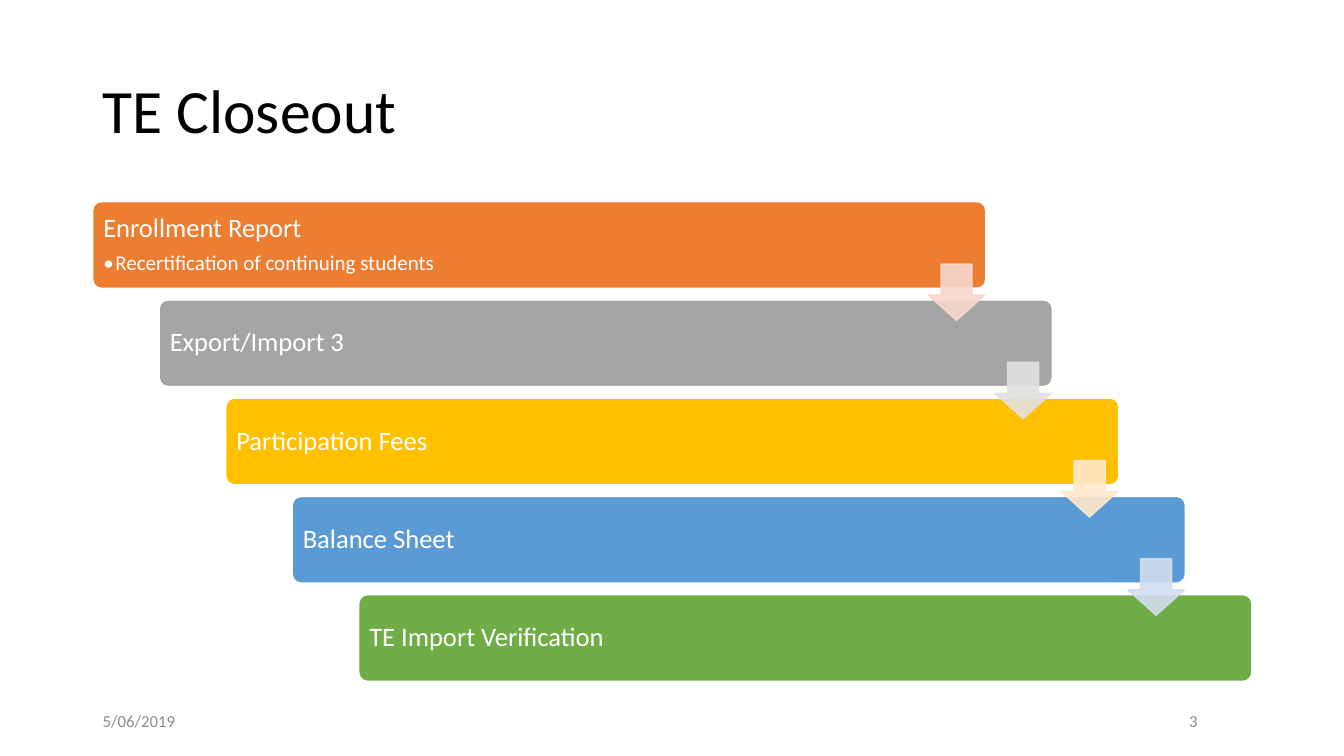
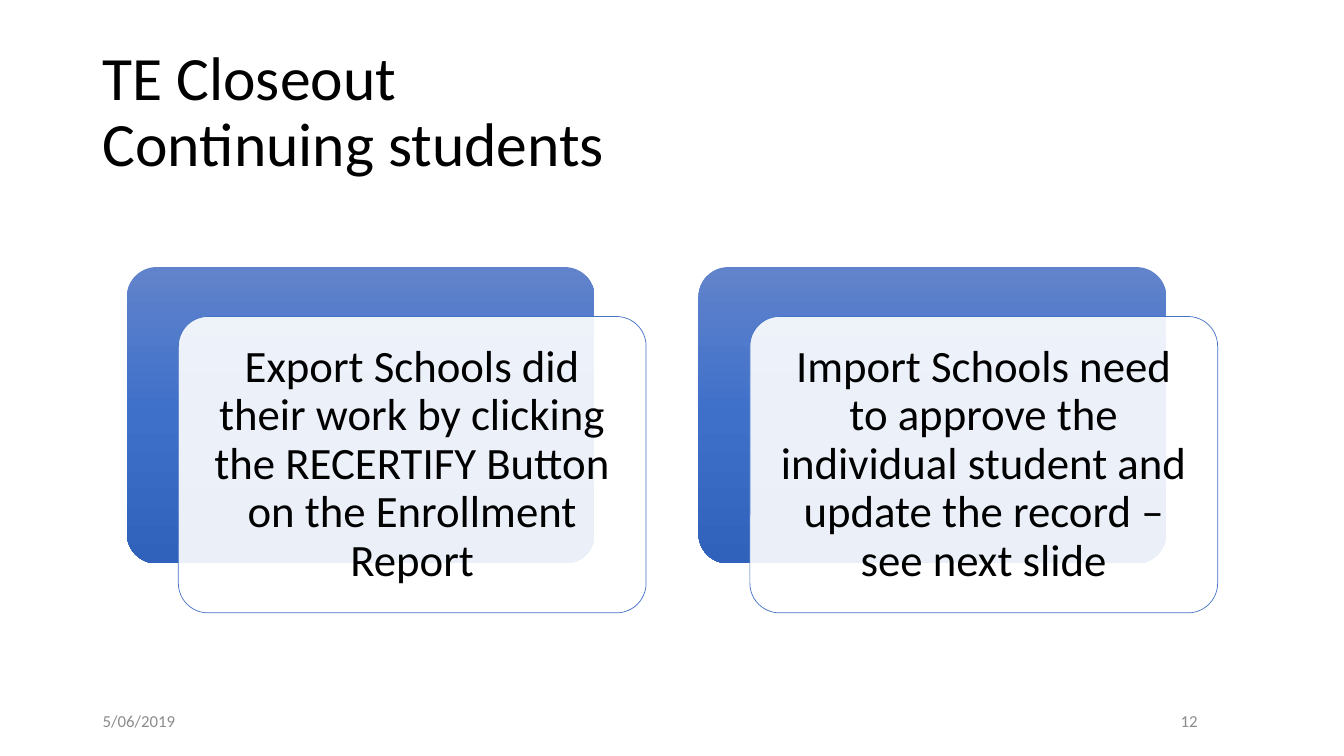
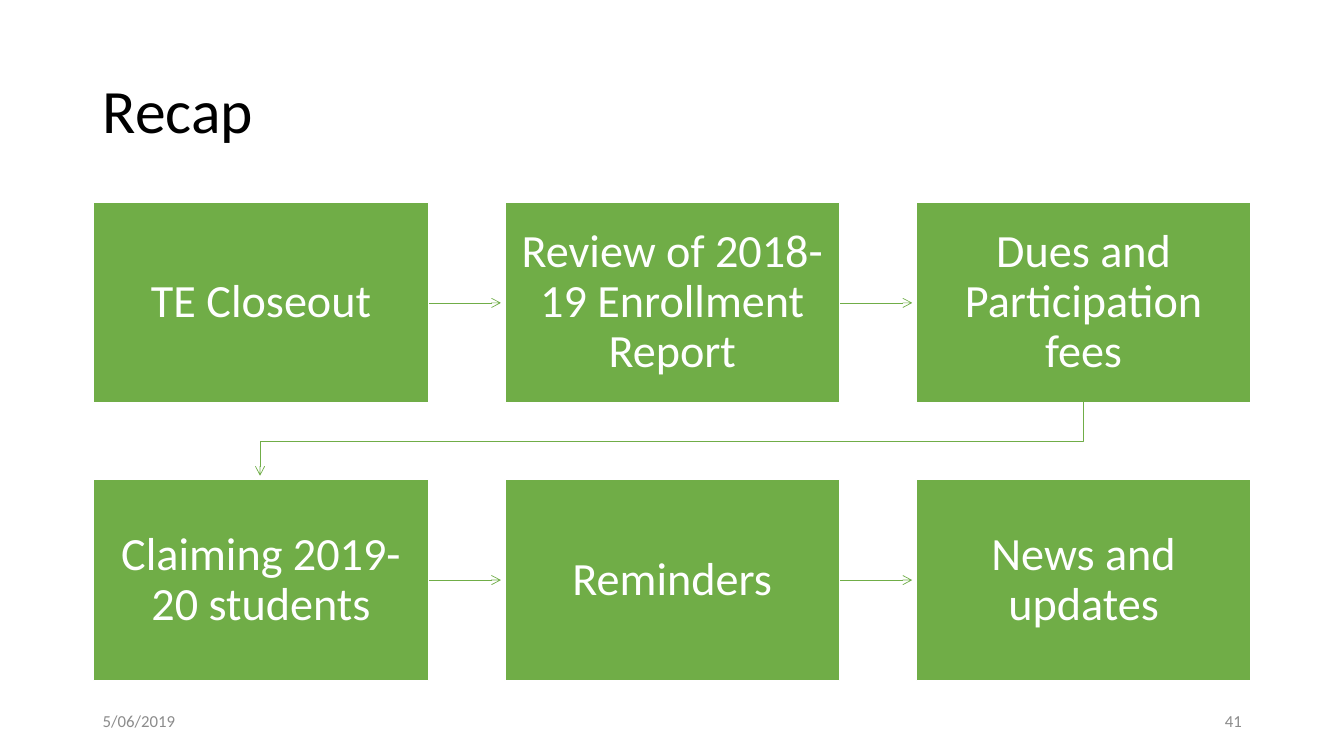
from typing import NamedTuple, Optional

from lxml.etree import SubElement
from pptx import Presentation
from pptx.dml.color import RGBColor
from pptx.enum.shapes import MSO_CONNECTOR, MSO_SHAPE as Kind
from pptx.enum.text import MSO_ANCHOR as Anchor, PP_ALIGN as Align
from pptx.oxml.ns import qn
from pptx.util import Inches, Pt

FONT = "Calibri"
BLACK = RGBColor(0x00, 0x00, 0x00)
WHITE = RGBColor(0xFF, 0xFF, 0xFF)
GRAY = RGBColor(0x8C, 0x8C, 0x8C)
ORANGE = RGBColor(0xED, 0x7D, 0x31)
SILVER = RGBColor(0xA5, 0xA5, 0xA5)
GOLD = RGBColor(0xFF, 0xC0, 0x00)
SKY = RGBColor(0x5B, 0x9B, 0xD5)
GREEN = RGBColor(0x70, 0xAD, 0x47)
BLUE = RGBColor(0x44, 0x72, 0xC4)
PEACH = RGBColor(0xF8, 0xD7, 0xCE)
PALE = RGBColor(0xE1, 0xE1, 0xE1)
CREAM = RGBColor(0xFF, 0xE8, 0xCC)
MIST = RGBColor(0xD2, 0xDE, 0xEF)
SHADES = (
    (0, RGBColor(0x61, 0x83, 0xCB)),
    (50, RGBColor(0x3E, 0x70, 0xCA)),
    (100, RGBColor(0x30, 0x62, 0xBB)),
)
DATE = "5/06/2019"


class Box(NamedTuple):
    left: float
    top: float
    width: float
    height: float

    def emu(self) -> tuple:
        return tuple(Inches(side) for side in self)


class Style(NamedTuple):
    size: float
    color: RGBColor
    align: Align = Align.LEFT
    pad: tuple = (0.1, 0.05)
    space: Optional[float] = 0.9


class Step(NamedTuple):
    label: str
    fill: RGBColor
    arrow: Optional[RGBColor] = None
    note: str = ""


TITLE = Style(44, BLACK)
FOOT = Style(12, GRAY, space=None)
PAGE = FOOT._replace(align=Align.RIGHT)
BAR = Style(19, WHITE, pad=(0.08, 0.08))
CARD = Style(32, BLACK, Align.CENTER, (0.15, 0.13))
TILE = Style(33, WHITE, Align.CENTER, (0.16, 0.17))

STEPS = (
    Step("Enrollment Report", ORANGE, PEACH, "Recertification of continuing students"),
    Step("Export/Import 3", SILVER, PALE),
    Step("Participation Fees", GOLD, CREAM),
    Step("Balance Sheet", SKY, MIST),
    Step("TE Import Verification", GREEN),
)
CARDS = (
    "Export Schools did their work by clicking the RECERTIFY Button "
    "on the Enrollment Report",
    "Import Schools need to approve the individual student and update "
    "the record – see next slide",
)
TOPICS = (
    "TE Closeout",
    "Review of 2018-19 Enrollment Report",
    "Dues and Participation fees",
    "Claiming 2019-20 students",
    "Reminders",
    "News and updates",
)


def write(shape, text: str, style: Style) -> None:
    frame = shape.text_frame
    frame.word_wrap = True
    frame.vertical_anchor = Anchor.MIDDLE
    frame.margin_left = frame.margin_right = Inches(style.pad[0])
    frame.margin_top = frame.margin_bottom = Inches(style.pad[1])
    frame.text = text
    for para in frame.paragraphs:
        para.alignment = style.align
        para.line_spacing = style.space
        para.font.name = FONT
        para.font.size = Pt(style.size)
        para.font.color.rgb = style.color


def add_text(slide, box: Box, text: str, style: Style) -> None:
    write(slide.shapes.add_textbox(*box.emu()), text, style)


def add_shape(slide, kind, box: Box, fill=None, line=None, width=1.0, adjust=()):
    shape = slide.shapes.add_shape(kind, *box.emu())
    shape.shadow.inherit = False
    for i, value in enumerate(adjust):
        shape.adjustments[i] = value
    if fill is None:
        shape.fill.background()
    else:
        shape.fill.solid()
        shape.fill.fore_color.rgb = fill
    if line is None:
        shape.line.fill.background()
    else:
        shape.line.color.rgb = line
        shape.line.width = Pt(width)
    return shape


def fade(part) -> None:
    """Make every colour inside an XML part 90% opaque."""
    for color in part.iter(qn("a:srgbClr")):
        SubElement(color, qn("a:alpha"), val="90000")


def shade(shape) -> None:
    """Fill a shape with the blue gradient, light at the top."""
    shape.fill.gradient()
    shape.fill.gradient_angle = 270
    stops = shape._element.spPr.find(qn("a:gradFill")).find(qn("a:gsLst"))
    for stop in list(stops):
        stops.remove(stop)
    for place, color in SHADES:
        stop = SubElement(stops, qn("a:gs"), pos=str(place * 1000))
        SubElement(stop, qn("a:srgbClr"), val=str(color))


def add_note(shape, text: str) -> None:
    """Add a bulleted line below the label of a bar."""
    frame = shape.text_frame
    frame.paragraphs[0].space_after = Pt(7)
    para = frame.add_paragraph()
    para.text = text
    para.alignment = Align.LEFT
    para.line_spacing = 0.9
    para.font.name = FONT
    para.font.size = Pt(15)
    para.font.color.rgb = WHITE
    props = para._p.get_or_add_pPr()
    props.set("marL", str(Inches(0.12)))
    props.set("indent", str(Inches(-0.12)))
    face = SubElement(props, qn("a:buFont"), typeface=FONT)
    bullet = SubElement(props, qn("a:buChar"), char="•")
    for part in (face, bullet):
        props.find(qn("a:defRPr")).addprevious(part)


def style_arrow(shape) -> None:
    shape.line.color.rgb = GREEN
    shape.line.width = Pt(0.5)
    SubElement(shape.line._get_or_add_ln(), qn("a:tailEnd"), type="arrow")


def add_arrow(slide, left: float, right: float, y: float) -> None:
    arrow = slide.shapes.add_connector(
        MSO_CONNECTOR.STRAIGHT, Inches(left), Inches(y), Inches(right), Inches(y)
    )
    style_arrow(arrow)
    SubElement(arrow._element.spPr, qn("a:effectLst"))


def add_bend(slide, points: list) -> None:
    """Draw an arrow along several points."""
    spots = [(Inches(x), Inches(y)) for x, y in points]
    outline = slide.shapes.build_freeform(*spots[0])
    outline.add_line_segments(spots[1:], close=False)
    bend = outline.convert_to_shape()
    bend.shadow.inherit = False
    bend.fill.background()
    style_arrow(bend)


def add_slide(deck, title: str, page: str, kind=Kind.OVAL):
    """Start a slide with its title, date and page number."""
    slide = deck.slides.add_slide(deck.slide_layouts[6])
    add_text(slide, Box(0.92, 0.4, 11.5, 1.45), title, TITLE)
    add_text(slide, Box(0.92, 6.95, 3, 0.4), DATE, FOOT)
    write(add_shape(slide, kind, Box(9.42, 6.95, 3, 0.4)), page, PAGE)
    return slide


def draw_steps(deck) -> None:
    slide = add_slide(deck, "TE Closeout", "3")
    spots = [(0.92 + 0.66 * i, 2 + 3.9 * i / 4) for i in range(len(STEPS))]
    for step, (x, y) in zip(STEPS, spots):
        box = Box(x, y, 8.86, 0.86)
        bar = add_shape(slide, Kind.ROUNDED_RECTANGLE, box, step.fill, WHITE, adjust=(0.1,))
        write(bar, step.label, BAR)
        if step.note:
            add_note(bar, step.note)
    for step, (x, y) in zip(STEPS, spots):
        if step.arrow is not None:
            box = Box(x + 8.29, y + 0.62, 0.56, 0.56)
            arrow = add_shape(
                slide, Kind.DOWN_ARROW, box, step.arrow, step.arrow, adjust=(0.55, 0.45)
            )
            fade(arrow._element.spPr)


def draw_cards(deck) -> None:
    slide = add_slide(deck, "TE Closeout\vContinuing students", "12")
    for i, text in enumerate(CARDS):
        back = Box(1.26 + 5.67 * i, 2.65, 4.64, 2.94)
        front = back._replace(left=back.left + 0.51, top=back.top + 0.49)
        shade(add_shape(slide, Kind.ROUNDED_RECTANGLE, back, BLUE, adjust=(0.1,)))
        card = add_shape(slide, Kind.ROUNDED_RECTANGLE, front, WHITE, BLUE, 0.5, (0.1,))
        fade(card._element.spPr.find(qn("a:solidFill")))
        write(card, text, CARD)


def draw_recap(deck) -> None:
    slide = add_slide(deck, "Recap", "41", Kind.RECTANGLE)
    cols, wide, high = 3, 3.32, 1.99
    for i, text in enumerate(TOPICS):
        row, col = divmod(i, cols)
        box = Box(0.93 + 4.08 * col, 2.01 + 2.75 * row, wide, high)
        if col < cols - 1:
            start = box.left + wide - 0.01
            add_arrow(slide, start, start + 0.73, box.top + high / 2)
        write(add_shape(slide, Kind.RECTANGLE, box, GREEN, WHITE), text, TILE)
    add_bend(slide, [(10.75, 3.99), (10.75, 4.38), (2.58, 4.38), (2.58, 4.72)])


def main() -> None:
    deck = Presentation()
    deck.slide_width, deck.slide_height = Inches(40 / 3), Inches(7.5)
    draw_steps(deck)
    draw_cards(deck)
    draw_recap(deck)
    deck.save("out.pptx")


if __name__ == "__main__":
    main()
